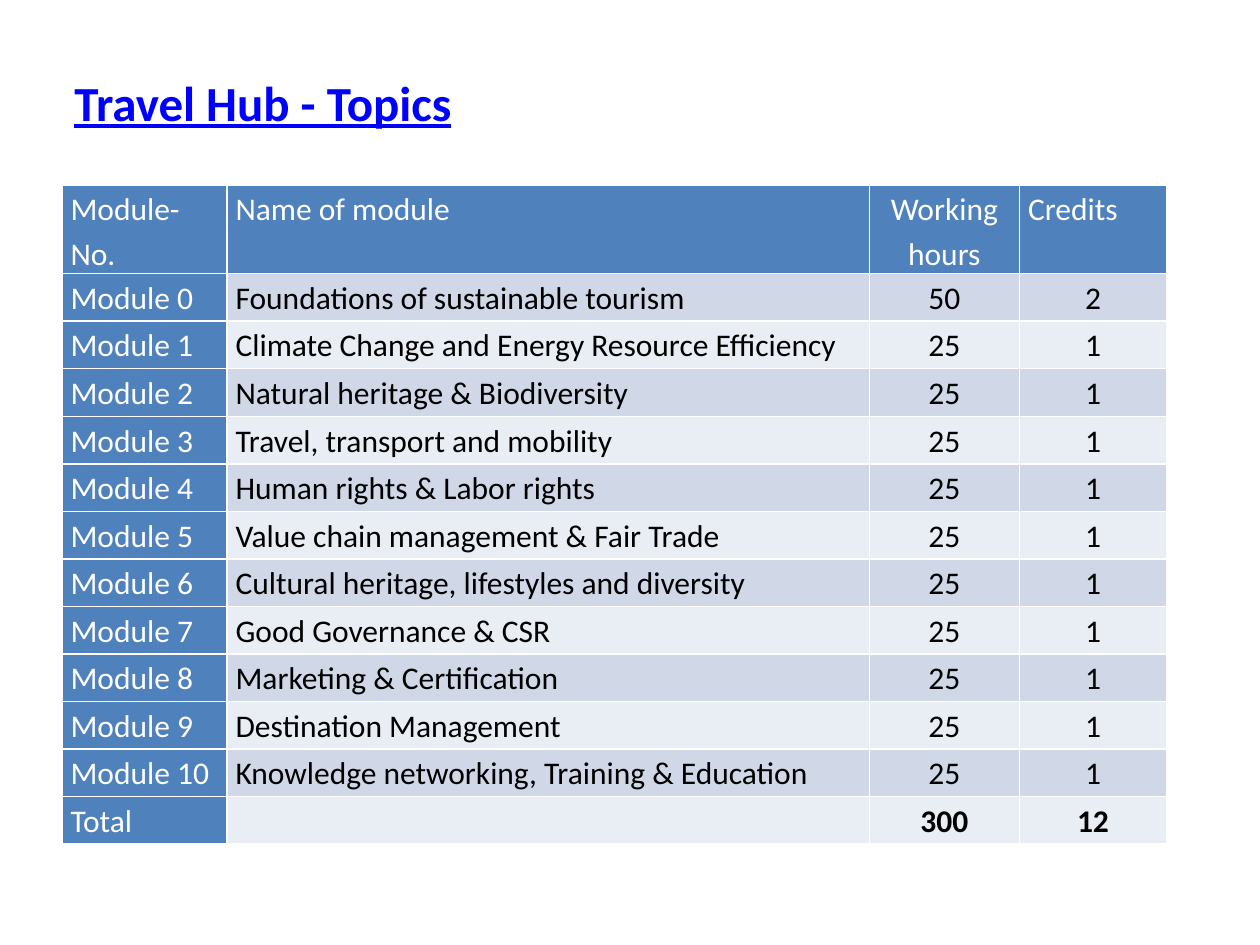
from lxml import etree
from pptx import Presentation
from pptx.dml.color import RGBColor
from pptx.enum.text import MSO_ANCHOR, PP_ALIGN
from pptx.oxml.ns import qn
from pptx.util import Inches, Pt

LEFT, CENTER = PP_ALIGN.LEFT, PP_ALIGN.CENTER
MIDDLE = MSO_ANCHOR.MIDDLE
COLORS = {
    "blue": "4F81BD",
    "dark_band": "D0D8E8",
    "light_band": "E9EDF4",
    "white": "FFFFFF",
    "black": "000000",
    "title": "0000FF",
}
FONT = "Calibri"


def write_text(text_frame, text, size=18, color="black", bold=False,
               underline=False, align=LEFT, spacing=1.0):
    paragraph = text_frame.paragraphs[0]
    paragraph.alignment = align
    paragraph.line_spacing = spacing
    if not text:
        return
    run = paragraph.add_run()
    run.text = text
    run.font.name = FONT
    run.font.size = Pt(size)
    run.font.bold = bold
    run.font.underline = underline
    run.font.color.rgb = RGBColor.from_string(COLORS[color])


def add_borders(cell):
    properties = cell._tc.get_or_add_tcPr()
    for side in "LRTB":
        line = etree.SubElement(properties, qn(f"a:ln{side}"), w=str(Pt(1)))
        fill = etree.SubElement(line, qn("a:solidFill"))
        etree.SubElement(fill, qn("a:srgbClr"), val=COLORS["white"])


presentation = Presentation()
presentation.slide_width = Inches(10)
presentation.slide_height = Inches(7.5)
slide = presentation.slides.add_slide(presentation.slide_layouts[5])

title = slide.shapes.title
title.left, title.top = Inches(0.49), Inches(0.52)
title.width, title.height = Inches(8.5), Inches(0.57)
title.text_frame.vertical_anchor = MIDDLE
write_text(title.text_frame, "Travel Hub - Topics", size=28, color="title",
           bold=True, underline=True)

modules = [
    ("Foundations of sustainable tourism", 50, 2),
    ("Climate Change and Energy Resource Efficiency", 25, 1),
    ("Natural heritage & Biodiversity", 25, 1),
    ("Travel, transport and mobility", 25, 1),
    ("Human rights & Labor rights", 25, 1),
    ("Value chain management & Fair Trade", 25, 1),
    ("Cultural heritage, lifestyles and diversity", 25, 1),
    ("Good Governance & CSR", 25, 1),
    ("Marketing & Certification", 25, 1),
    ("Destination Management", 25, 1),
    ("Knowledge networking, Training & Education", 25, 1),
]
rows = [("Module-No.", "Name of module", "Working hours", "Credits")]
rows += [(f"Module {number}", *module) for number, module in enumerate(modules)]
rows.append(("Total", "", sum(module[1] for module in modules),
             sum(module[2] for module in modules)))
column_widths = [1.31, 5.1, 1.19, 1.17]
table_height, header_height = 5.23, 0.7
row_height = (table_height - header_height) / (len(rows) - 1)
row_heights = [header_height] + [row_height] * (len(rows) - 1)

table = slide.shapes.add_table(
    len(rows), len(column_widths), Inches(0.49), Inches(1.47),
    Inches(sum(column_widths)), Inches(table_height)).table
for column, width in zip(table.columns, column_widths):
    column.width = Inches(width)
for row, height in zip(table.rows, row_heights):
    row.height = Inches(height)

for row_index, values in enumerate(rows):
    is_header = row_index == 0
    is_total = row_index == len(rows) - 1
    band = "dark_band" if row_index % 2 else "light_band"
    for column_index, value in enumerate(values):
        cell = table.cell(row_index, column_index)
        is_blue = is_header or column_index == 0
        is_centered = column_index == 2 or (column_index == 3 and not is_header)
        cell.margin_left = cell.margin_right = Inches(0.07)
        cell.margin_top = cell.margin_bottom = 0
        add_borders(cell)
        cell.fill.solid()
        cell.fill.fore_color.rgb = RGBColor.from_string(
            COLORS["blue" if is_blue else band])
        write_text(cell.text_frame, str(value),
                   color="white" if is_blue else "black",
                   bold=is_total and not is_blue,
                   align=CENTER if is_centered else LEFT, spacing=1.15)

presentation.save("out.pptx")
